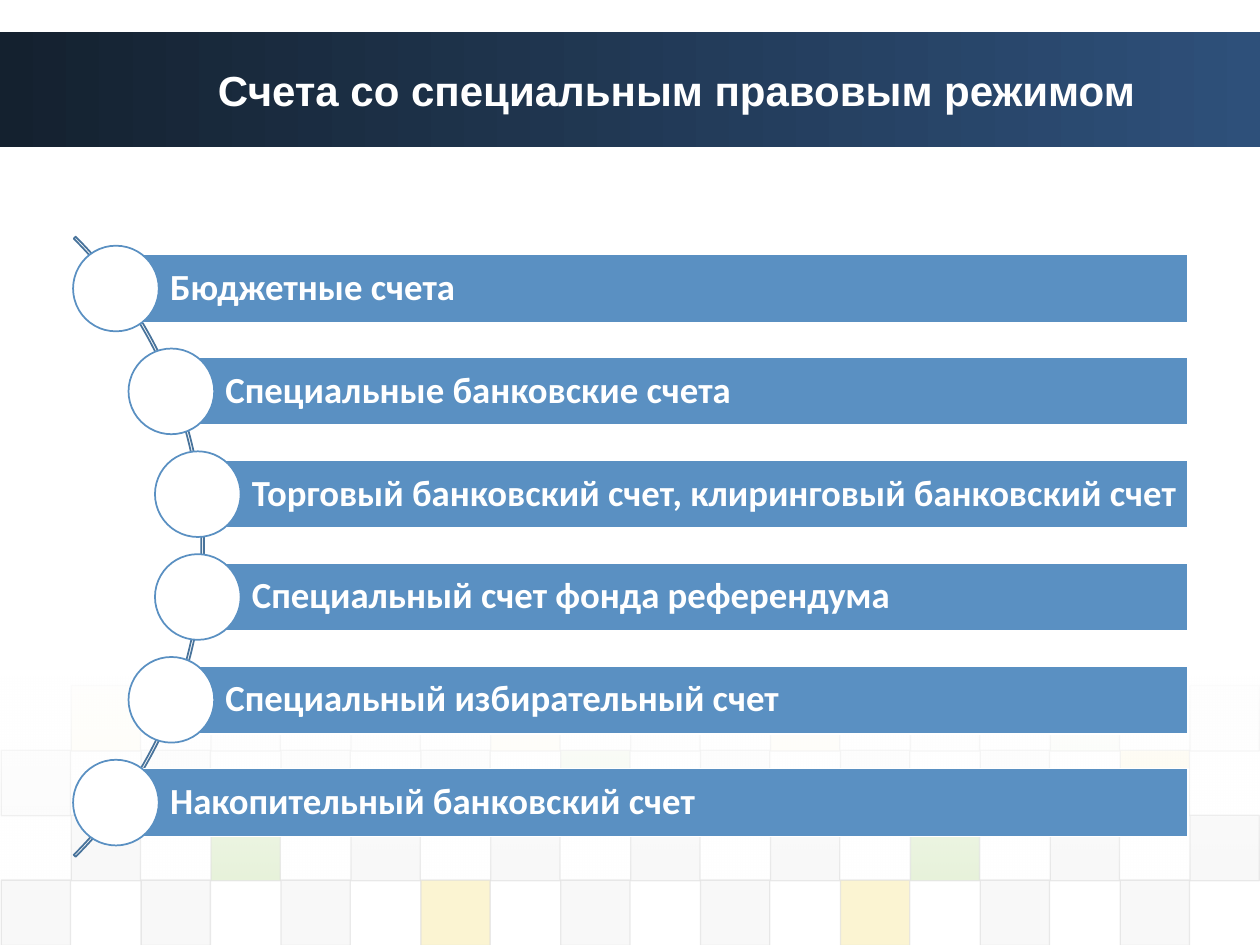
import dataclasses

import pptx
import pptx.dml.color
import pptx.enum.shapes
import pptx.enum.text
import pptx.oxml.ns
import pptx.util
from lxml import etree

Inches = pptx.util.Inches
Pt = pptx.util.Pt
SHAPE = pptx.enum.shapes.MSO_SHAPE
ALIGN = pptx.enum.text.PP_ALIGN


@dataclasses.dataclass(frozen=True)
class Theme:
    white: str = "FFFFFF"
    band_start: str = "14212F"
    band_end: str = "2E507A"
    bar: str = "5A90C2"
    arc: str = "48739B"
    grey: str = "DDDDDD"
    pale: str = "EAEAEA"
    green: str = "8AC246"
    yellow: str = "EFC821"
    title_font: str = "Arial"
    body_font: str = "Calibri"
    title_size: int = 24
    body_size: int = 21


class Deck:
    def __init__(self, prs, theme):
        self.theme = theme
        self.s = prs.slides.add_slide(prs.slide_layouts[6])

    def paint(self, color, value):
        color.rgb = pptx.dml.color.RGBColor.from_string(value)

    def set_alpha(self, element, alphas):
        colors = element.iter(pptx.oxml.ns.qn("a:srgbClr"))
        for clr, alpha in zip(list(colors), alphas):
            node = etree.SubElement(clr, pptx.oxml.ns.qn("a:alpha"))
            node.set("val", str(alpha * 1000))

    def shape(self, kind, x, y, w, h, fill=None, line=None, width=1, alphas=()):
        sp = self.s.shapes.add_shape(kind, Inches(x), Inches(y), Inches(w), Inches(h))
        sp.shadow.inherit = False
        if fill:
            sp.fill.solid()
            self.paint(sp.fill.fore_color, fill)
        else:
            sp.fill.background()
        if line:
            self.paint(sp.line.color, line)
            sp.line.width = Pt(width)
        else:
            sp.line.fill.background()
        self.set_alpha(sp.element.spPr, alphas)
        return sp

    def gradient(self, x, y, w, h, colors, angle, alphas=()):
        sp = self.shape(SHAPE.RECTANGLE, x, y, w, h)
        sp.fill.gradient()
        sp.fill.gradient_angle = angle
        for stop, value in zip(sp.fill.gradient_stops, colors):
            self.paint(stop.color, value)
        self.set_alpha(sp.element.spPr, alphas)

    def tile(self, x, y, color, alpha):
        self.shape(SHAPE.RECTANGLE, x, y, 0.55, 0.52, color,
                   self.theme.grey, 0.75, (alpha, 60))

    def add_text(self, sp, text, font, size, align):
        tf = sp.text_frame
        tf.word_wrap = True
        tf.vertical_anchor = pptx.enum.text.MSO_ANCHOR.MIDDLE
        p = tf.paragraphs[0]
        p.alignment = align
        r = p.add_run()
        r.text = text
        r.font.name = font
        r.font.size = Pt(size)
        r.font.bold = True
        self.paint(r.font.color, self.theme.white)
        return tf

    def title(self, text, x, y, w, h):
        sp = self.s.shapes.add_textbox(Inches(x), Inches(y), Inches(w), Inches(h))
        self.add_text(sp, text, self.theme.title_font, self.theme.title_size, ALIGN.CENTER)

    def arc(self, x, y, size):
        sp = self.shape(SHAPE.BLOCK_ARC, x, y, size, size, line=self.theme.arc)
        for i, value in enumerate((189, 27, 0.0031)):
            sp.adjustments[i] = value

    def item(self, text, x, y, right):
        t = self.theme
        height, diameter = 0.54, 0.68
        sp = self.shape(SHAPE.RECTANGLE, x, y, right - x, height, t.bar, t.white)
        tf = self.add_text(sp, text, t.body_font, t.body_size, ALIGN.LEFT)
        tf.margin_left = Inches(0.43)
        tf.margin_top = tf.margin_right = tf.margin_bottom = Inches(0.06)
        tf.paragraphs[0].line_spacing = 0.9
        tf.paragraphs[0].space_after = Pt(7)
        self.shape(SHAPE.OVAL, x - diameter / 2, y + (height - diameter) / 2,
                   diameter, diameter, t.white, t.bar)


TILE_ROWS = [
    (1, 5, "YEEYDYEGE"),
    (0, 10, "DDDDGDDDY"),
    (1, 20, "DGDDDDGDD"),
    (0, 20, "DDDYDDYDD"),
]
ACCOUNTS = [
    ("Бюджетные счета", 0.92),
    ("Специальные банковские счета", 1.36),
    ("Торговый банковский счет, клиринговый банковский счет", 1.57),
    ("Специальный счет фонда референдума", 1.57),
    ("Специальный избирательный счет", 1.36),
    ("Накопительный банковский счет", 0.92),
]


def main():
    prs = pptx.Presentation()
    prs.slide_width, prs.slide_height = Inches(10), Inches(7.5)
    theme = Theme()
    deck = Deck(prs, theme)

    deck.gradient(0, 0.25, 10, 0.92, (theme.band_start, theme.band_end), 0)
    tile_colors = {"D": theme.grey, "E": theme.pale, "G": theme.green, "Y": theme.yellow}
    for row, (offset, alpha, codes) in enumerate(TILE_ROWS):
        for i, code in enumerate(codes):
            deck.tile(0.01 + 0.555 * (2 * i + offset), 5.44 + 0.515 * row,
                      tile_colors[code], alpha)
    deck.gradient(0, 5.37, 10, 1.62, (theme.white, theme.white), 270, (90, 0))

    deck.title("Счета со специальным правовым режимом", 1.33, 0.25, 8.08, 0.92)
    deck.arc(-5.34, 0.86, 6.96)
    for i, (text, left) in enumerate(ACCOUNTS):
        deck.item(text, left, 2.02 + 0.816 * i, 9.43)

    prs.save("out.pptx")


if __name__ == "__main__":
    main()
